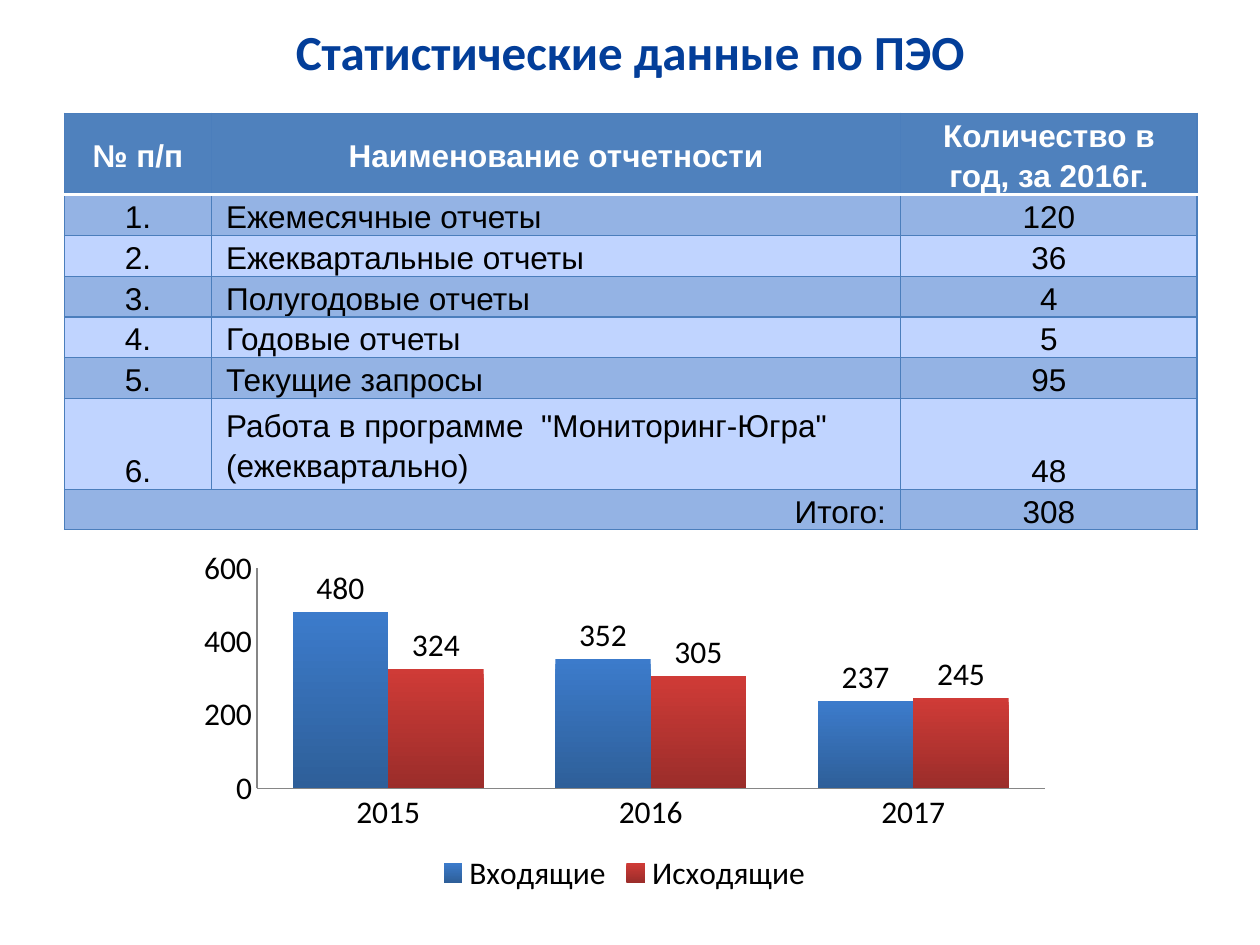
from lxml import etree
from pptx import Presentation
from pptx.chart.data import CategoryChartData
from pptx.dml.color import RGBColor
from pptx.enum.chart import XL_CHART_TYPE as ChartType, XL_LABEL_POSITION as LabelPosition
from pptx.enum.chart import XL_LEGEND_POSITION as LegendPosition, XL_TICK_MARK as TickMark
from pptx.enum.text import MSO_ANCHOR as Anchor, PP_ALIGN as Align
from pptx.oxml.ns import qn
from pptx.util import Cm, Pt


def color(value):
    return RGBColor.from_string(value)


def add_border(cell, side, value, width):
    line = etree.SubElement(cell._tc.get_or_add_tcPr(), qn(f"a:ln{side}"), w=str(Pt(width)))
    fill = etree.SubElement(line, qn("a:solidFill"))
    etree.SubElement(fill, qn("a:srgbClr"), val=value)


deck = Presentation()
deck.slide_width, deck.slide_height = Cm(25.4), Cm(19.05)
slide = deck.slides.add_slide(deck.slide_layouts[5])

title = slide.shapes.title
title.left, title.top, title.width, title.height = Cm(1.27), Cm(0.33), Cm(22.86), Cm(1.4)
title.text_frame.text = "Статистические данные по ПЭО"
title.text_frame.vertical_anchor = Anchor.MIDDLE
para = title.text_frame.paragraphs[0]
para.alignment = Align.CENTER
font = para.runs[0].font
font.name, font.size, font.bold = "Calibri", Pt(28), True
font.color.rgb = color("033E99")

rows = [
    ("№ п/п", "Наименование отчетности", "Количество в год, за 2016г."),
    ("1.", "Ежемесячные отчеты", "120"),
    ("2.", "Ежеквартальные отчеты", "36"),
    ("3.", "Полугодовые отчеты", "4"),
    ("4.", "Годовые отчеты", "5"),
    ("5.", "Текущие запросы", "95"),
    ("6.", "Работа в программе  \"Мониторинг-Югра\" (ежеквартально)", "48"),
    ("Итого:", "", "308"),
]
header, work, total = 0, 6, 7
heights = {header: 1.65, work: 1.83}
frame = slide.shapes.add_table(len(rows), 3, Cm(1.3), Cm(2.28), Cm(22.83), Cm(8.4))
table = frame.table
for column, width in zip(table.columns, (2.96, 13.9, 5.97)):
    column.width = Cm(width)

for r, texts in enumerate(rows):
    table.rows[r].height = Cm(heights.get(r, 0.82))
    for c, text in enumerate(texts):
        cell = table.cell(r, c)
        cell.margin_left = cell.margin_right = Cm(0.3)
        cell.margin_top = cell.margin_bottom = 0
        middle = r == header or (r, c) in ((work, 1), (total, 2))
        cell.vertical_anchor = Anchor.MIDDLE if middle else Anchor.BOTTOM
        for side in "LRTB":
            under_header = (r, side) in ((header, "B"), (header + 1, "T"))
            add_border(cell, side, *(("FFFFFF", 2) if under_header else ("4B7EBC", 0.75)))
        cell.fill.solid()
        band = "94B3E4" if r % 2 else "C0D4FF"
        cell.fill.fore_color.rgb = color("4F81BD" if r == header else band)
        cell.text_frame.text = text
        para = cell.text_frame.paragraphs[0]
        para.line_spacing = 1.15
        para.alignment = Align.LEFT if c == 1 and r != header else Align.CENTER
        para.font.name, para.font.size = "Arial", Pt(18)
        for run in para.runs:
            run.font.name, run.font.size, run.font.bold = "Arial", Pt(18), r == header
            run.font.color.rgb = color("FFFFFF" if r == header else "000000")
table.cell(total, 0).merge(table.cell(total, 1))
table.cell(total, 0).text_frame.paragraphs[0].alignment = Align.RIGHT

data = CategoryChartData()
data.categories = ["2015", "2016", "2017"]
data.add_series("Входящие", (480, 352, 237))
data.add_series("Исходящие", (324, 305, 245))
chart = slide.shapes.add_chart(
    ChartType.COLUMN_CLUSTERED, Cm(3.76), Cm(10.92), Cm(17.65), Cm(7.19), data
).chart
chart.has_title = False
chart.font.name, chart.font.size = "Calibri", Pt(18)
chart.font.color.rgb = color("000000")
chart.has_legend = True
chart.legend.position = LegendPosition.BOTTOM
chart.legend.include_in_layout = False

for axis in (chart.category_axis, chart.value_axis):
    axis.major_tick_mark = axis.minor_tick_mark = TickMark.NONE
    axis.has_major_gridlines = False
    axis.format.line.color.rgb = color("868686")
    axis.format.line.width = Pt(0.75)
chart.value_axis.minimum_scale = 0
chart.value_axis.maximum_scale = 600
chart.value_axis.major_unit = 200

plot = chart.plots[0]
plot.gap_width, plot.overlap = 75, 0
plot.vary_by_categories = False
for series, shades in zip(plot.series, (("3C7BCB", "2E5F99"), ("CF3B37", "9B2D2A"))):
    fill = series.format.fill
    fill.gradient()
    fill.gradient_angle = 270
    for stop, shade in zip(fill.gradient_stops, shades):
        stop.color.rgb = color(shade)
    labels = series.data_labels
    labels.show_value = True
    labels.position = LabelPosition.OUTSIDE_END

deck.save("out.pptx")
